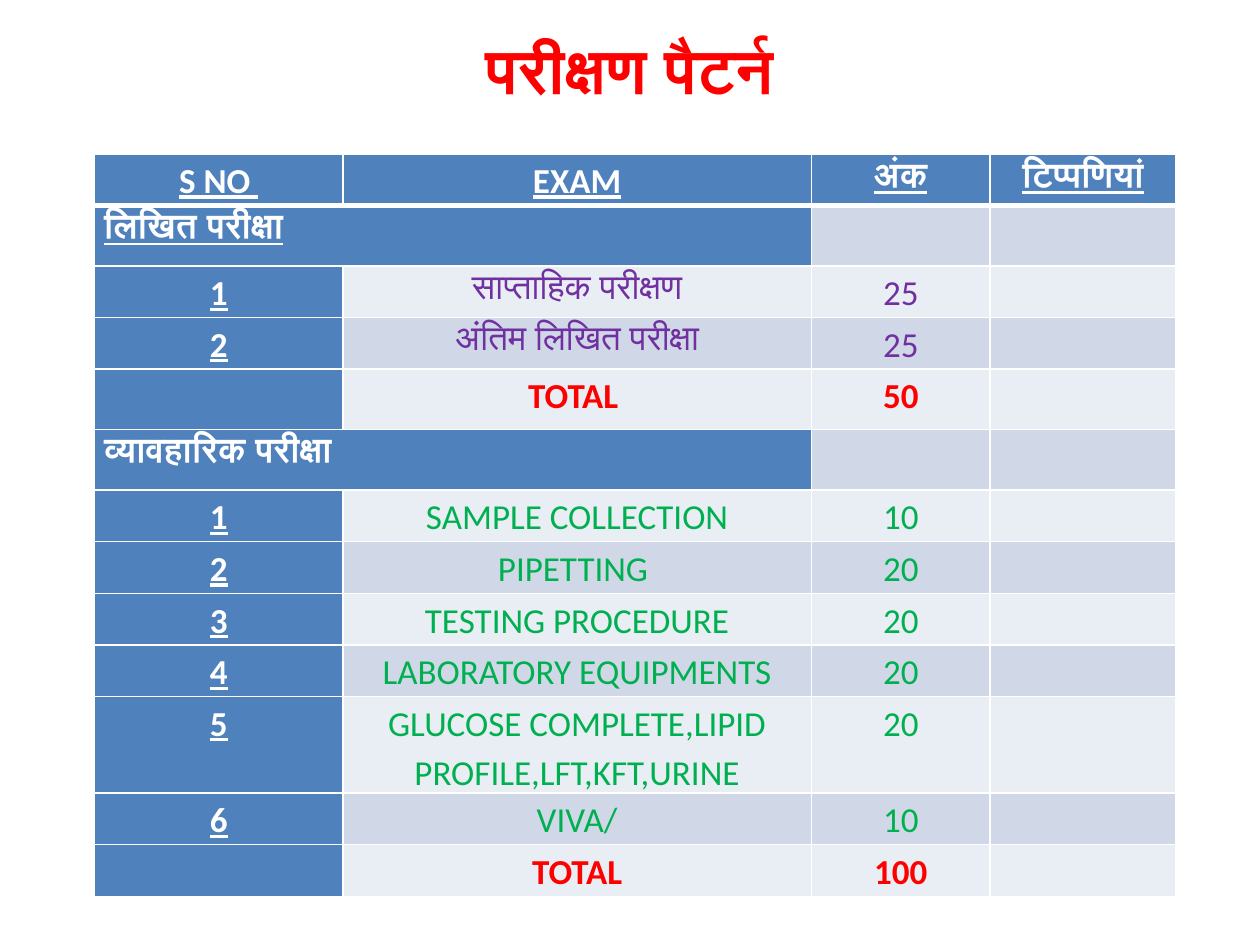
"""Build a slide with the exam pattern table."""
from lxml import etree
from pptx import Presentation
from pptx.dml.color import RGBColor
from pptx.enum.text import MSO_ANCHOR, PP_ALIGN
from pptx.oxml.ns import qn
from pptx.util import Cm, Pt

LEFT, MID = PP_ALIGN.LEFT, PP_ALIGN.CENTER
CENTRE = MSO_ANCHOR.MIDDLE
WHITE = RGBColor(0xFF, 0xFF, 0xFF)
RED = RGBColor(0xFF, 0x00, 0x00)
BLUE = RGBColor(0x4F, 0x81, 0xBD)
PALE = RGBColor(0xE9, 0xED, 0xF4)
DARK = RGBColor(0xD0, 0xD8, 0xE8)
PURPLE = RGBColor(0x70, 0x30, 0xA0)
GREEN = RGBColor(0x00, 0xB0, 0x50)

FONT = "Calibri"
TITLE = "परीक्षण पैटर्न"
HEAD = ("S NO ", "EXAM", "अंक", "टिप्पणियां")
PARTS = [
    ("लिखित परीक्षा", True, PURPLE, [
        ("साप्ताहिक परीक्षण", "25"),
        ("अंतिम लिखित परीक्षा", "25"),
    ], ("TOTAL\u00a0", "50")),
    ("व्यावहारिक परीक्षा", False, GREEN, [
        ("SAMPLE COLLECTION", "10"),
        ("PIPETTING ", "20"),
        ("TESTING PROCEDURE", "20"),
        ("LABORATORY EQUIPMENTS", "20"),
        ("GLUCOSE COMPLETE,LIPID PROFILE,LFT,KFT,URINE", "20"),
        ("VIVA/", "10"),
    ], ("TOTAL", "100")),
]
COLS = (5, 9.45, 3.6, 3.75)
LOW, TALL = 1.04, 1.22
TALL_ROWS = (1, 4, 5)


def write(frame, text, color, size=20, bold=True, line=False, align=MID):
    para = frame.paragraphs[0]
    para.alignment = align
    run = para.add_run()
    run.text = text
    font = run.font
    font.name, font.size = FONT, Pt(size)
    font.bold, font.underline = bold, line
    font.color.rgb = color
    return para


def fill(cell, text, color, **look):
    cell.margin_left = cell.margin_right = Cm(0.19)
    cell.margin_top = cell.margin_bottom = 0
    para = write(cell.text_frame, text, color, **look)
    para.line_spacing = 1.15


def edge(cell, row):
    props = cell._tc.get_or_add_tcPr()
    wide = {"lnT": row == 1, "lnB": row == 0}
    for spot, side in enumerate(("lnL", "lnR", "lnT", "lnB")):
        line = etree.Element(qn("a:" + side), w=str(Pt(3 if wide.get(side) else 1)))
        solid = etree.SubElement(line, qn("a:solidFill"))
        etree.SubElement(solid, qn("a:srgbClr"), val=str(WHITE))
        props.insert(spot, line)


def paint(table):
    for r, row in enumerate(table.rows):
        row.height = Cm(TALL if r in TALL_ROWS else LOW)
        for c, cell in enumerate(row.cells):
            cell.fill.solid()
            band = DARK if r % 2 else PALE
            cell.fill.fore_color.rgb = BLUE if r == 0 or c == 0 else band
            edge(cell, r)


def main():
    deck = Presentation()
    deck.slide_width, deck.slide_height = Cm(25.4), Cm(19.05)
    slide = deck.slides.add_slide(deck.slide_layouts[6])

    box = slide.shapes.add_textbox(Cm(1.27), Cm(0.64), Cm(22.86), Cm(1.47))
    box.text_frame.word_wrap = True
    box.text_frame.vertical_anchor = CENTRE
    write(box.text_frame, TITLE, RED, size=36)

    count = 1 + sum(len(part[3]) + 2 for part in PARTS)
    high = LOW * count + (TALL - LOW) * len(TALL_ROWS)
    table = slide.shapes.add_table(
        count, len(COLS), Cm(1.91), Cm(3.1), Cm(sum(COLS)), Cm(high)).table
    for col, width in zip(table.columns, COLS):
        col.width = Cm(width)
    paint(table)

    for c, text in enumerate(HEAD):
        fill(table.cell(0, c), text, WHITE, line=True)
    r = 1
    for name, line, color, exams, total in PARTS:
        first = table.cell(r, 0)
        first.merge(table.cell(r, 1))
        fill(first, name, WHITE, line=line, align=LEFT)
        for num, exam in enumerate(exams, 1):
            fill(table.cell(r + num, 0), str(num), WHITE, line=True)
            for c, text in enumerate(exam, 1):
                fill(table.cell(r + num, c), text, color, bold=False)
        r += len(exams) + 1
        for c, text in enumerate(total, 1):
            fill(table.cell(r, c), text, RED)
        r += 1

    deck.save("out.pptx")


if __name__ == "__main__":
    main()
